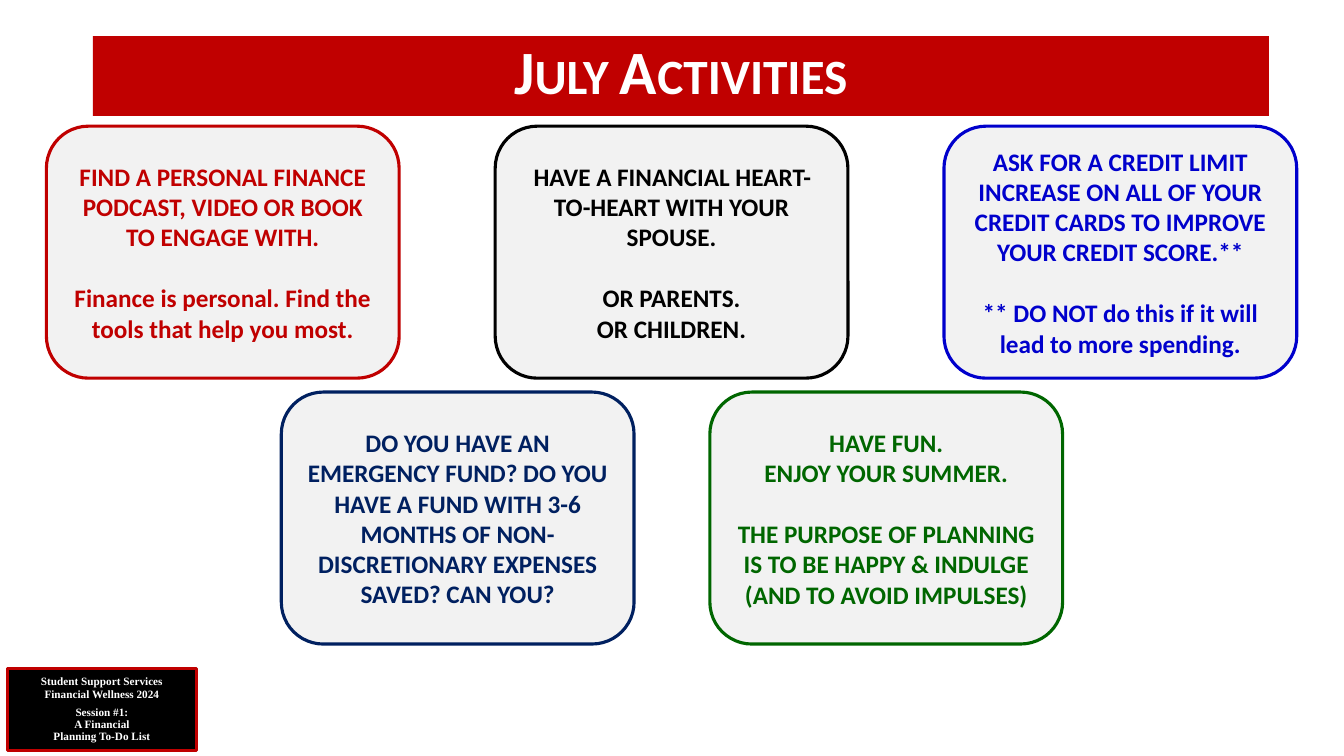
from lxml.etree import SubElement
from pptx import Presentation
from pptx.dml.color import RGBColor
from pptx.enum.shapes import MSO_SHAPE as Shape
from pptx.enum.text import MSO_ANCHOR as Anchor, MSO_AUTO_SIZE as AutoSize, PP_ALIGN as Align
from pptx.util import Cm, Pt

COLORS = {
    "red": "C00000", "black": "000000", "blue": "0000CC", "navy": "002060",
    "green": "006600", "card": "F2F2F2", "white": "FFFFFF",
}


def write(box, blocks, size, color, font="Calibri", gap=0, spacing=1.0, anchor=Anchor.MIDDLE, small_caps=False):
    """Fill box with blocks of lines, with gap points above each later block."""
    frame = box.text_frame
    frame.word_wrap = True
    frame.auto_size = AutoSize.NONE
    frame.vertical_anchor = anchor
    lines = [(line, gap if block and not row else 0)
             for block, text in enumerate(blocks)
             for row, line in enumerate(text.split("\n"))]
    for index, (line, before) in enumerate(lines):
        para = frame.add_paragraph() if index else frame.paragraphs[0]
        para.alignment = Align.CENTER
        para.line_spacing = spacing
        para.space_before = Pt(before)
        span = para.add_run()
        span.text = line
        span.font.name = font
        span.font.size = Pt(size)
        span.font.bold = True
        span.font.color.rgb = RGBColor.from_string(COLORS[color])
        if small_caps:
            span.font._element.set("cap", "small")


def add_panel(kind, left, top, width, height, fill, line):
    panel = page.shapes.add_shape(kind, Cm(left), Cm(top), Cm(width), Cm(height))
    panel.shadow.inherit = False
    panel.fill.solid()
    panel.fill.fore_color.rgb = RGBColor.from_string(COLORS[fill])
    panel.line.color.rgb = RGBColor.from_string(COLORS[line])
    panel.line.width = Pt(2.25)
    return panel


deck = Presentation()
deck.slide_width, deck.slide_height = Cm(33.87), Cm(19.05)
page = deck.slides.add_slide(deck.slide_layouts[5])

title = page.shapes.title
title.left, title.top, title.width, title.height = Cm(2.34), Cm(0.91), Cm(29.64), Cm(2.01)
title.fill.solid()
title.fill.fore_color.rgb = RGBColor.from_string(COLORS["red"])
write(title, ["July Activities"], 44, "white", spacing=0.9, anchor=Anchor.TOP, small_caps=True)

session = add_panel(Shape.RECTANGLE, 0.18, 16.84, 4.78, 2.08, "black", "red")
write(session, ["Student Support Services\nFinancial Wellness 2024",
                "Session #1:\nA Financial\nPlanning To-Do List"],
      8, "white", font="Times New Roman", gap=4.3, spacing=0.9)

# Each row: left of first card, top, step between cards, cards
card_rows = [
    (1.17, 3.18, 11.31, [
        ("red", ["FIND A PERSONAL FINANCE PODCAST, VIDEO OR BOOK TO ENGAGE WITH.",
                 "Finance is personal. Find the tools that help you most."]),
        ("black", ["HAVE A FINANCIAL HEART-TO-HEART WITH YOUR SPOUSE.",
                   "OR PARENTS.\nOR CHILDREN."]),
        ("blue", ["ASK FOR A CREDIT LIMIT INCREASE ON ALL OF YOUR CREDIT CARDS "
                  "TO IMPROVE YOUR CREDIT SCORE.**",
                  "** DO NOT do this if it will lead to more spending."]),
    ]),
    (7.09, 9.88, 10.8, [
        ("navy", ["DO YOU HAVE AN EMERGENCY FUND? DO YOU HAVE A FUND WITH 3-6 "
                  "MONTHS OF NON-DISCRETIONARY EXPENSES SAVED? CAN YOU?"]),
        ("green", ["HAVE FUN.\nENJOY YOUR SUMMER.",
                   "THE PURPOSE OF PLANNING IS TO BE HAPPY & INDULGE\n(AND TO AVOID IMPULSES)"]),
    ]),
]
for left, top, step, cards in card_rows:
    for column, (color, blocks) in enumerate(cards):
        card = add_panel(Shape.ROUNDED_RECTANGLE, left + column * step, top, 8.89, 6.35, "card", color)
        write(card, blocks, 18, color, gap=22)

deck.save("out.pptx")
